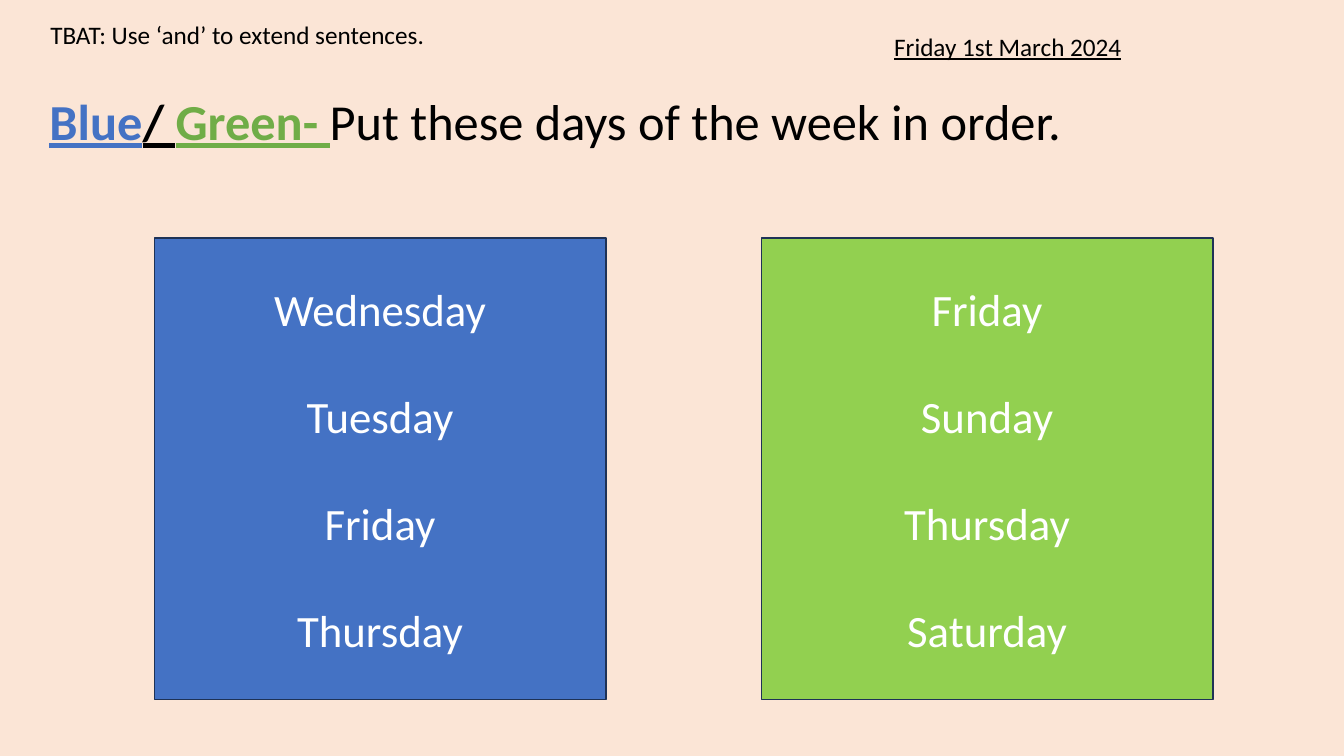
from pptx import Presentation
from pptx.dml.color import RGBColor
from pptx.enum.shapes import MSO_SHAPE
from pptx.enum.text import MSO_ANCHOR, MSO_AUTO_SIZE, PP_ALIGN
from pptx.util import Pt

RECT = MSO_SHAPE.RECTANGLE
TOP, MIDDLE = MSO_ANCHOR.TOP, MSO_ANCHOR.MIDDLE
LEFT, CENTER = PP_ALIGN.LEFT, PP_ALIGN.CENTER
NO_FIT = MSO_AUTO_SIZE.NONE

PX = 9144
FONT = "Calibri"
BLACK, WHITE, PEACH, NAVY, BLUE = "000000", "FFFFFF", "FBE5D6", "1E3256", "4472C4"

HEAD = [
    ("Blue", BLUE, True),
    ("/ ", BLACK, True),
    ("Green- ", "70AD47", True),
    ("Put these days of the week in order.", BLACK, False),
]
NOTES = [
    ("Friday 1st March 2024", (877, 26, 435, 40), True),
    ("TBAT: Use ‘and’ to extend sentences.", (40, 14, 555, 40), False),
]
CARDS = [
    (BLUE, ["Wednesday", "Tuesday", "Friday", "Thursday"]),
    ("92D050", ["Friday", "Sunday", "Thursday", "Saturday"]),
]
CARD_X, CARD_Y, CARD_W, CARD_H, CARD_STEP = 153, 236, 448, 458, 602
DAY_GAP = 38


def color(text):
    return RGBColor.from_string(text)


def scale(box):
    return [n * PX for n in box]


def style(run, size, tint, bold=False, line=False):
    font = run.font
    font.name, font.size = FONT, Pt(size)
    font.bold, font.underline = bold, line
    font.color.rgb = color(tint)


def add_head(slide):
    title = slide.shapes.title
    title.left, title.top, title.width, title.height = scale((39, 84, 1230, 71))
    frame = title.text_frame
    frame.auto_size, frame.vertical_anchor = NO_FIT, TOP
    para = frame.paragraphs[0]
    para.alignment = LEFT
    for text, tint, strong in HEAD:
        run = para.add_run()
        run.text = text
        style(run, 36, tint, strong, strong)


def add_note(slide, text, box, line):
    frame = slide.shapes.add_textbox(*scale(box)).text_frame
    frame.word_wrap = True
    frame.text = text
    style(frame.paragraphs[0].runs[0], 18, BLACK, line=line)


def add_card(slide, x, fill, days):
    card = slide.shapes.add_shape(RECT, *scale((x, CARD_Y, CARD_W, CARD_H)))
    card.shadow.inherit = False
    card.fill.solid()
    card.fill.fore_color.rgb = color(fill)
    card.line.color.rgb = color(NAVY)
    card.line.width = Pt(1)
    frame = card.text_frame
    frame.vertical_anchor = MIDDLE
    frame.text = "\n".join(days)
    for i, para in enumerate(frame.paragraphs):
        para.alignment = CENTER
        para.space_before = Pt(DAY_GAP if i else 0)
        style(para.runs[0], 32, WHITE)


def main():
    deck = Presentation()
    deck.slide_width, deck.slide_height = scale((1333, 750))
    slide = deck.slides.add_slide(deck.slide_layouts[5])
    back = slide.background.fill
    back.solid()
    back.fore_color.rgb = color(PEACH)
    add_head(slide)
    for note in NOTES:
        add_note(slide, *note)
    for i, (fill, days) in enumerate(CARDS):
        add_card(slide, CARD_X + i * CARD_STEP, fill, days)
    deck.save("out.pptx")


if __name__ == "__main__":
    main()
